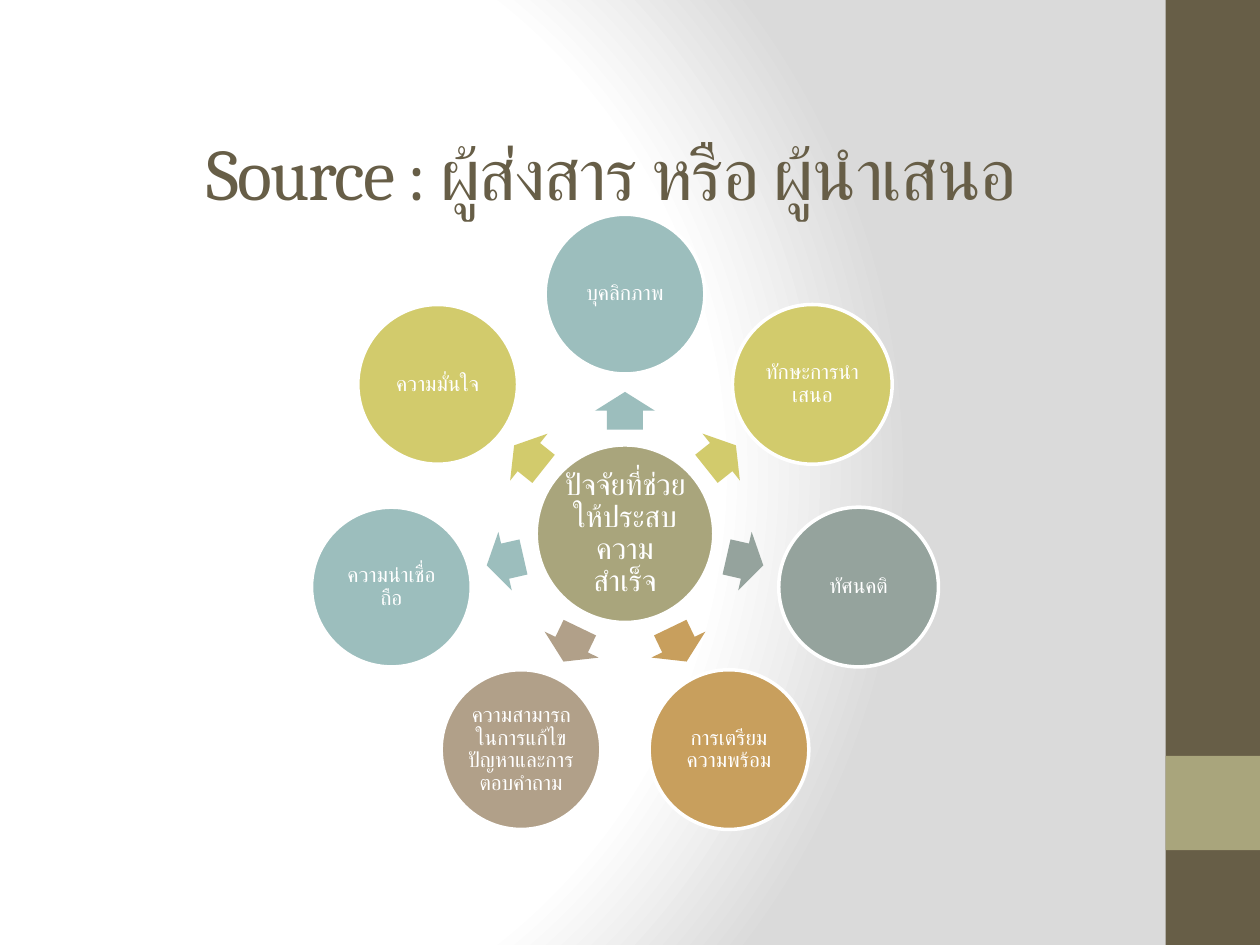
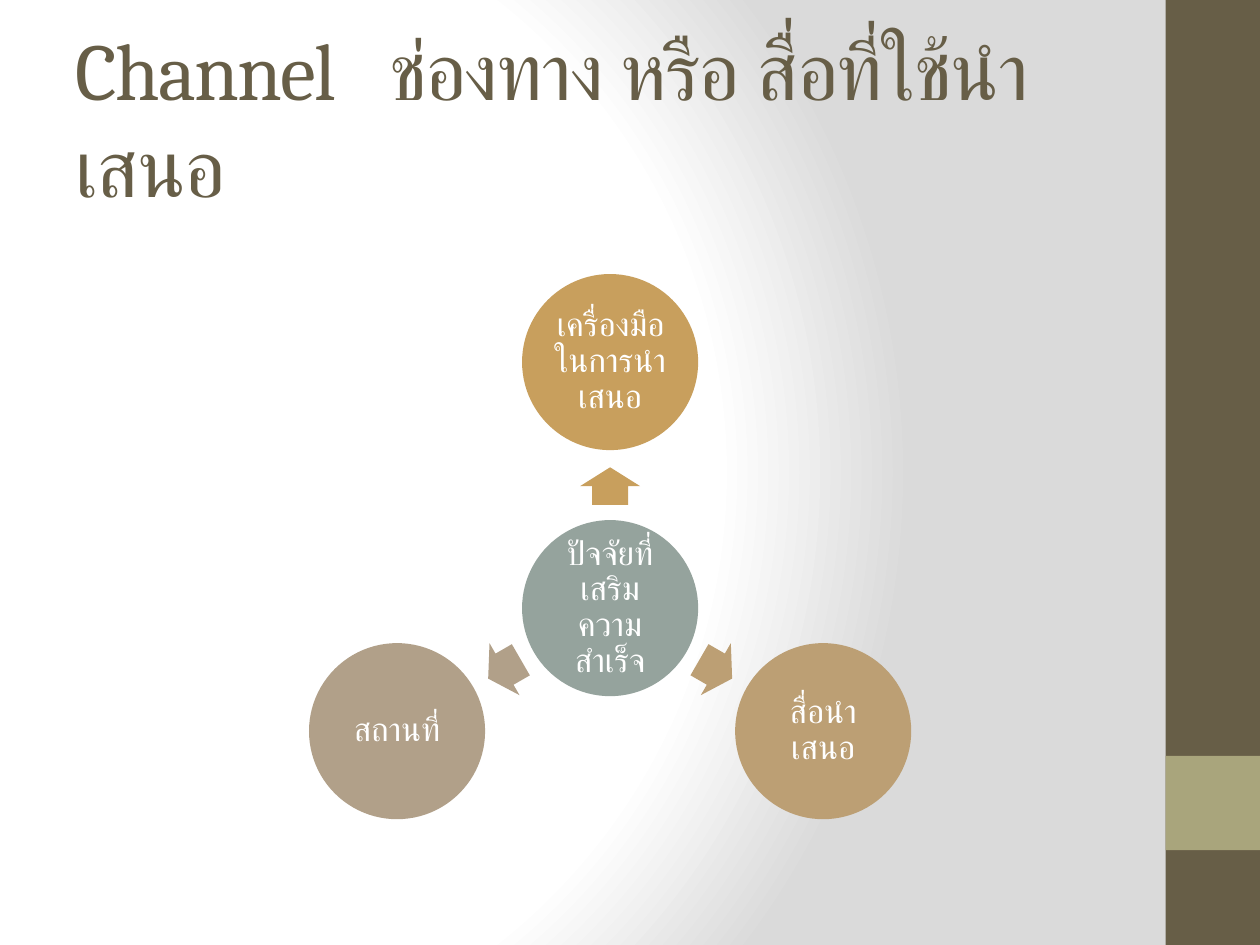
import math
from dataclasses import dataclass

import pptx
import pptx.dml.color
import pptx.enum.shapes
import pptx.enum.text
import pptx.oxml
import pptx.oxml.ns
import pptx.util

Cm = pptx.util.Cm
Pt = pptx.util.Pt
SHAPE = pptx.enum.shapes.MSO_SHAPE
ALIGN = pptx.enum.text.PP_ALIGN
ANCHOR = pptx.enum.text.MSO_ANCHOR


@dataclass(frozen=True)
class Theme:
    brown: str = "675E47"
    olive: str = "A9A57C"
    teal: str = "9CBEBD"
    lime: str = "D2CB6C"
    sage: str = "95A39D"
    amber: str = "C89F5D"
    tan: str = "BC9F74"
    taupe: str = "B1A089"
    white: str = "FFFFFF"
    grey: str = "DADADA"
    heading_font: str = "Cambria"
    body_font: str = "Calibri"
    title_size: float = 46
    small_title_size: float = 41.4
    big_hub_size: float = 17
    big_node_size: float = 12
    small_wheel_size: float = 19


THEME = Theme()


def rgb(color):
    return pptx.dml.color.RGBColor.from_string(color)


def write(p, text, *, font, size, color, spacing=0):
    """Add a run; spacing is the letter spacing in points."""
    r = p.add_run()
    r.text = text
    r.font.name = font
    r.font.size = Pt(size)
    r.font.color.rgb = rgb(color)
    if spacing:
        r.font.element.set("spc", str(round(spacing * 100))) if hasattr(
            r.font, "element") else r._r.get_or_add_rPr().set("spc", str(round(spacing * 100)))
    return r


class Deck:
    def __init__(self, theme):
        self.theme = theme
        self.prs = pptx.Presentation()
        self.prs.slide_width, self.prs.slide_height = Cm(25.4), Cm(19.05)
        self.s = None

    def add_slide(self):
        self.s = self.prs.slides.add_slide(self.prs.slide_layouts[5])

    def shape(self, kind, left, top, width, height, fill, line=None):
        sp = self.s.shapes.add_shape(kind, Cm(left), Cm(top), Cm(width), Cm(height))
        sp.shadow.inherit = False
        sp.fill.solid()
        sp.fill.fore_color.rgb = rgb(fill)
        if line:
            sp.line.color.rgb = rgb(line)
            sp.line.width = Pt(2)
        else:
            sp.line.fill.background()
        return sp

    def master_background(self):
        master = self.prs.slide_master
        master.background.fill.gradient()
        old = next(master.element.iter(pptx.oxml.ns.qn("a:gradFill")))
        stops = "".join(
            f'<a:gs pos="{pos * 1000}"><a:srgbClr val="{color}"/></a:gs>'
            for pos, color in ((0, self.theme.white), (75, self.theme.white), (100, self.theme.grey)))
        new = pptx.oxml.parse_xml(
            f'<a:gradFill {pptx.oxml.ns.nsdecls("a")} rotWithShape="1"><a:gsLst>{stops}</a:gsLst>'
            '<a:path path="circle"><a:fillToRect l="20000" t="50000" r="100000" b="50000"/>'
            '</a:path></a:gradFill>')
        old.getparent().replace(old, new)

    def master_bands(self):
        """Draw the side bands on the current slide, then move them to the master."""
        tree = self.prs.slide_master.shapes.element
        for i, (top, height, color) in enumerate(
                ((0, 19.05, self.theme.brown), (15.24, 1.9, self.theme.olive))):
            sp = self.shape(SHAPE.RECTANGLE, 23.5, top, 1.9, height, color)
            tree.insert(2 + i, sp.element)

    def title(self, parts, left, top, width, height, size):
        """Each part is a text and its letter spacing."""
        sp = self.s.shapes.title
        sp.left, sp.top, sp.width, sp.height = Cm(left), Cm(top), Cm(width), Cm(height)
        tf = sp.text_frame
        tf.word_wrap = True
        tf.auto_size = pptx.enum.text.MSO_AUTO_SIZE.NONE
        tf.vertical_anchor = ANCHOR.MIDDLE
        p = tf.paragraphs[0]
        p.alignment = ALIGN.LEFT
        for text, spacing in parts:
            write(p, text, font=self.theme.heading_font, size=size,
                  color=self.theme.brown, spacing=spacing)

    def circle(self, x, y, diameter, text, fill, size, line=None):
        """Place a labelled circle by its centre."""
        sp = self.shape(SHAPE.OVAL, x - diameter / 2, y - diameter / 2,
                        diameter, diameter, fill, line)
        tf = sp.text_frame
        tf.word_wrap = True
        tf.vertical_anchor = ANCHOR.MIDDLE
        tf.margin_left = tf.margin_right = tf.margin_top = tf.margin_bottom = Cm(0.05)
        p = tf.paragraphs[0]
        p.alignment = ALIGN.CENTER
        p.line_spacing = 0.9
        write(p, text, font=self.theme.body_font, size=size, color=self.theme.white)

    def arrow(self, x, y, angle, fill):
        length, width = 0.76, 1.21
        sp = self.shape(SHAPE.RIGHT_ARROW, x - length / 2, y - width / 2, length, width, fill)
        sp.adjustments[0], sp.adjustments[1] = 0.6, 0.5
        sp.rotation = angle % 360

    def wheel(self, center, hub, nodes, *, hub_diameter, node_diameter, orbit,
              arrow_orbit, hub_size, node_size, line=None):
        """Set nodes clockwise from the top around a hub, with arrows pointing outward."""
        x, y = center
        self.circle(x, y, hub_diameter, *hub, hub_size, line)
        for i, (text, fill) in enumerate(nodes):
            angle = 360 * i / len(nodes) - 90
            dx, dy = math.cos(math.radians(angle)), math.sin(math.radians(angle))
            self.arrow(x + arrow_orbit * dx, y + arrow_orbit * dy, angle, fill)
            self.circle(x + orbit * dx, y + orbit * dy, node_diameter, text, fill, node_size, line)


def source_slide(deck):
    t = deck.theme
    deck.title([("Source : ผู้ส่งสาร หรือ ผู้นำเสนอ", -1)], 3.91, 2.51, 17.78, 1.9,
               t.small_title_size)
    factors = [
        ("บุคลิกภาพ", t.teal),
        ("ทักษะการนำเสนอ", t.lime),
        ("ทัศนคติ", t.sage),
        ("การเตรียมความพร้อม", t.amber),
        ("ความสามารถในการแก้ไขปัญหาและการตอบคำถาม", t.taupe),
        ("ความน่าเชื่อถือ", t.teal),
        ("ความมั่นใจ", t.lime),
    ]
    deck.wheel((12.6, 10.76), ("ปัจจัยที่ช่วยให้ประสบความสำเร็จ", t.olive), factors,
               hub_diameter=3.58, node_diameter=3.22, orbit=4.83, arrow_orbit=2.48,
               hub_size=t.big_hub_size, node_size=t.big_node_size, line=t.white)


def channel_slide(deck):
    t = deck.theme
    deck.title([("Channel", -1), (" ", 20), ("ช่องทาง หรือ สื่อที่ใช้นำเสนอ", -1)],
               1.27, 0.76, 21.17, 3.18, t.title_size)
    factors = [
        ("เครื่องมือในการนำเสนอ", t.amber),
        ("สื่อนำเสนอ", t.tan),
        ("สถานที่", t.taupe),
    ]
    deck.wheel((12.3, 12.26), ("ปัจจัยที่เสริมความสำเร็จ", t.sage), factors,
               hub_diameter=3.55, node_diameter=3.55, orbit=4.96, arrow_orbit=2.46,
               hub_size=t.small_wheel_size, node_size=t.small_wheel_size)


def main():
    deck = Deck(THEME)
    deck.add_slide()
    deck.master_background()
    deck.master_bands()
    source_slide(deck)
    deck.add_slide()
    channel_slide(deck)
    deck.prs.save("out.pptx")


if __name__ == "__main__":
    main()
